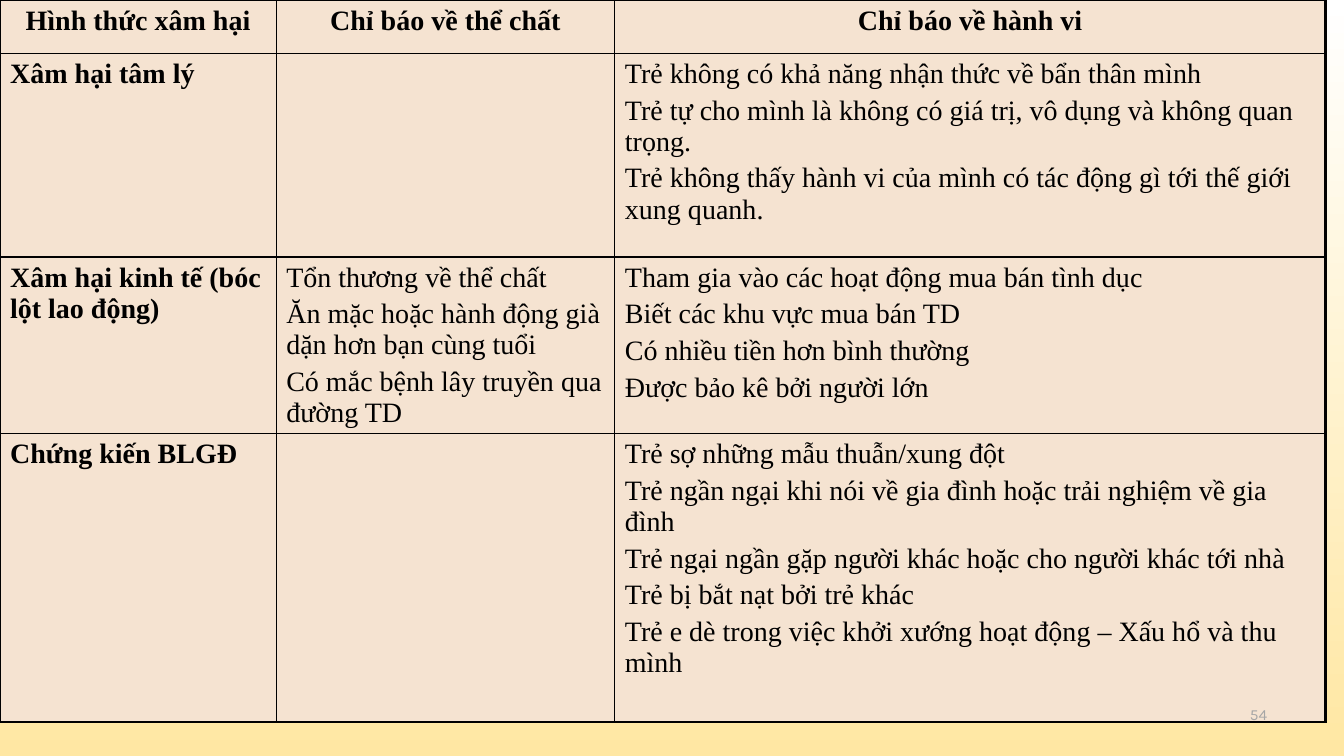
from dataclasses import dataclass

import pptx
import pptx.dml.color
import pptx.enum.text
import pptx.oxml
import pptx.oxml.ns
import pptx.util

Pt = pptx.util.Pt
Rgb = pptx.dml.color.RGBColor.from_string
Align = pptx.enum.text.PP_ALIGN


@dataclass(frozen=True)
class Theme:
    ink: str = "000000"
    cell: str = "F5E3D1"
    top: str = "FFFFFF"
    base: str = "FFE7A3"
    grey: str = "A6A6A6"
    serif: str = "Times New Roman"
    sans: str = "Karla"
    body: int = 20
    small: int = 11
    gap: int = 4
    thin: float = 1
    thick: float = 2.25


THEME = Theme()
COLS = (197.3, 241.9, 507.6)
ROWS = (38.2, 145.4, 126, 206)
HEADS = ("Hình thức xâm hại", "Chỉ báo về thể chất", "Chỉ báo về hành vi")
ABUSE = (
    ("Xâm hại tâm lý", (), (
        "Trẻ không có khả năng nhận thức về bẩn thân mình",
        "Trẻ tự cho mình là không có giá trị, vô dụng và không quan trọng.",
        "Trẻ không thấy hành vi của mình có tác động gì tới thế giới xung quanh.",
    )),
    ("Xâm hại kinh tế (bóc lột lao động)", (
        "Tổn thương về thể chất",
        "Ăn mặc hoặc hành động già dặn hơn bạn cùng tuổi",
        "Có mắc bệnh lây truyền qua đường TD",
    ), (
        "Tham gia vào các hoạt động mua bán tình dục",
        "Biết các khu vực mua bán TD",
        "Có nhiều tiền hơn bình thường",
        "Được bảo kê bởi người lớn",
    )),
    ("Chứng kiến BLGĐ", (), (
        "Trẻ sợ những mẫu thuẫn/xung đột",
        "Trẻ ngần ngại khi nói về gia đình hoặc trải nghiệm về gia đình",
        "Trẻ ngại ngần gặp người khác hoặc cho người khác tới nhà",
        "Trẻ bị bắt nạt bởi trẻ khác",
        "Trẻ e dè trong việc khởi xướng hoạt động – Xấu hổ và thu mình",
    )),
)


def style(font, name, size, color, bold=False):
    font.name, font.size, font.bold = name, Pt(size), bold
    font.color.rgb = Rgb(color)


def write(cell, lines, bold, align):
    frame = cell.text_frame
    for i, line in enumerate(lines):
        para = frame.add_paragraph() if i else frame.paragraphs[0]
        para.text = line
        para.alignment = align
        para.space_before = Pt(THEME.gap if i else 0)
        style(para.font, THEME.serif, THEME.body, THEME.ink, bold)


def rule(edge, col):
    """Width of the horizontal line at a row edge, counted from the top."""
    if edge == 0:
        return THEME.thick
    return THEME.thick if edge in (2, 4) and col != 1 else THEME.thin


def border(cell, row, col):
    sides = {
        "L": THEME.thin if col else THEME.thick,
        "R": THEME.thick if col == len(COLS) - 1 else THEME.thin,
        "T": rule(row, col),
        "B": rule(row + 1, col),
    }
    props = cell._tc.get_or_add_tcPr()
    for side, width in sides.items():
        props.append(pptx.oxml.parse_xml(
            f'<a:ln{side} {pptx.oxml.ns.nsdecls("a")} w="{Pt(width)}">'
            f'<a:solidFill><a:srgbClr val="{THEME.ink}"/></a:solidFill>'
            f'</a:ln{side}>'))


def grid(slide, left, top):
    data = [[(head,) for head in HEADS]]
    data += [[(kind,), body, acts] for kind, body, acts in ABUSE]
    table = slide.shapes.add_table(
        len(ROWS), len(COLS), Pt(left), Pt(top),
        Pt(sum(COLS)), Pt(sum(ROWS))).table
    for col, width in zip(table.columns, COLS):
        col.width = Pt(width)
    for r, (row, height) in enumerate(zip(table.rows, ROWS)):
        row.height = Pt(height)
        for c, cell in enumerate(row.cells):
            border(cell, r, c)
            cell.fill.solid()
            cell.fill.fore_color.rgb = Rgb(THEME.cell)
            write(cell, data[r][c], r == 0 or c == 0,
                  Align.LEFT if r else Align.CENTER)


def number(slide, left, top, width, height):
    frame = slide.shapes.add_textbox(
        Pt(left), Pt(top), Pt(width), Pt(height)).text_frame
    frame.word_wrap = True
    frame.vertical_anchor = pptx.enum.text.MSO_ANCHOR.MIDDLE
    para = frame.paragraphs[0]
    para.text = "54"
    para.alignment = Align.RIGHT
    style(para.font, THEME.sans, THEME.small, THEME.grey)


def backdrop(slide):
    fill = slide.background.fill
    fill.gradient()
    fill.gradient_angle = 270
    for stop, color, place in zip(
            fill.gradient_stops, (THEME.top, THEME.base), (0, 1)):
        stop.color.rgb = Rgb(color)
        stop.position = place


def main():
    deck = pptx.Presentation()
    deck.slide_width, deck.slide_height = Pt(960), Pt(540)
    slide = deck.slides.add_slide(deck.slide_layouts[6])
    backdrop(slide)
    grid(slide, 0, 0)
    number(slide, 688.3, 491.8, 223.9, 37.4)
    deck.save("out.pptx")


if __name__ == "__main__":
    main()
